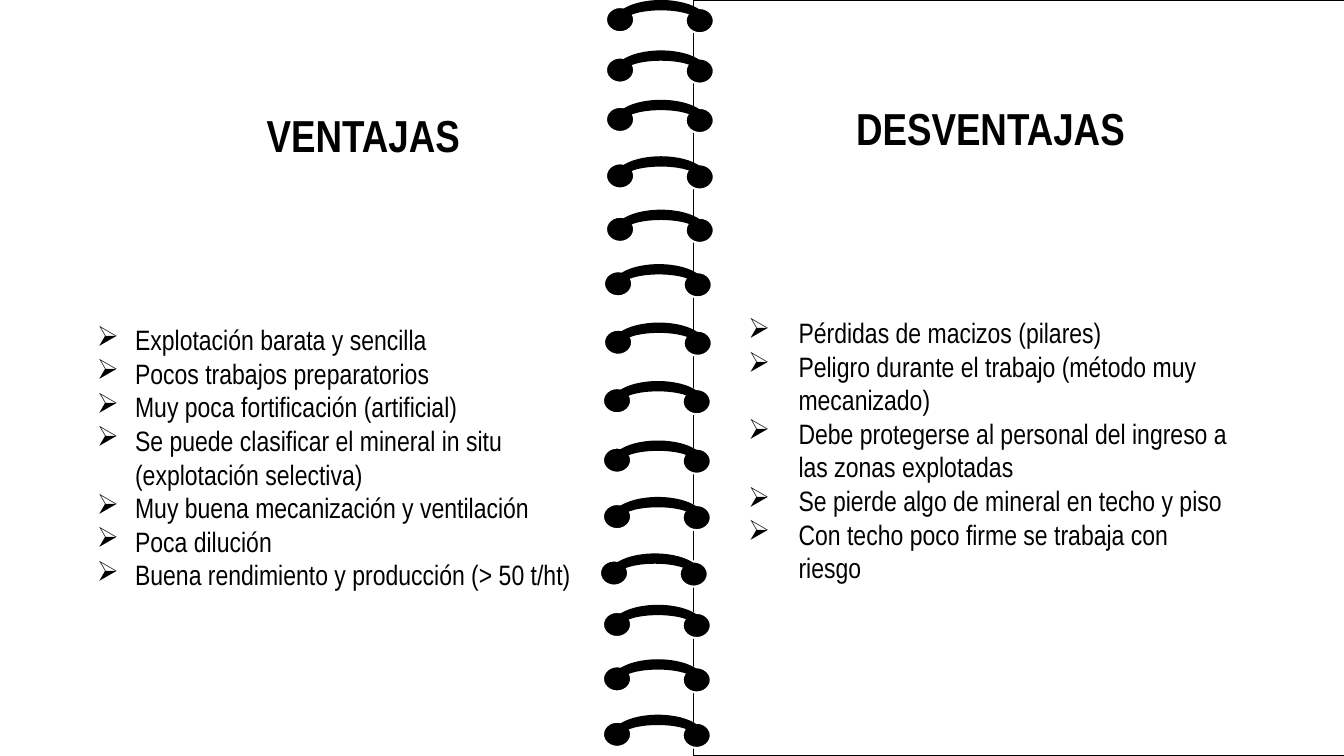
from dataclasses import dataclass

from lxml import etree
from pptx import Presentation
from pptx import util as u
from pptx.dml.color import RGBColor
from pptx.enum import shapes, text
from pptx.oxml.ns import qn

PX = 9144  # 100 px to the inch


@dataclass(frozen=True)
class Theme:
    ink: RGBColor = RGBColor(0, 0, 0)
    paper: RGBColor = RGBColor(255, 255, 255)
    font: str = "Arial Narrow"
    title: int = 32
    body: int = 20


THEME = Theme()

# Left and top of each ring's arc
RINGS = [(610, 0), (610, 50), (610, 99), (610, 155), (610, 208), (608, 262), (608, 320),
         (607, 378), (607, 437), (607, 493), (604, 549), (607, 600), (607, 654), (607, 709)]

VENTAJAS = [
    "Explotación barata y sencilla",
    "Pocos trabajos preparatorios",
    "Muy poca fortificación (artificial)",
    "Se puede clasificar el mineral in situ (explotación selectiva)",
    "Muy buena mecanización y ventilación",
    "Poca dilución",
    "Buena rendimiento y producción (> 50 t/ht)",
]
DESVENTAJAS = [
    "Pérdidas de macizos (pilares)",
    "Peligro durante el trabajo (método muy mecanizado)",
    "Debe protegerse al personal del ingreso a las zonas explotadas",
    "Se pierde algo de mineral en techo y piso",
    "Con techo poco firme se trabaja con riesgo",
]


def px(*lengths):
    return [u.Emu(n * PX) for n in lengths]


def add_shape(s, kind, box, fill, line=None, weight=1):
    sp = s.shapes.add_shape(kind, *px(*box))
    sp.shadow.inherit = False
    sp.fill.solid()
    sp.fill.fore_color.rgb = fill
    if line is None:
        sp.line.fill.background()
    else:
        sp.line.color.rgb = line
        sp.line.width = u.Pt(weight)


def add_ring(s, x, y):
    """Two punched holes joined by an arc whose box starts at x, y."""
    for dx, dy in ((-9, 7), (70, 8)):
        add_shape(s, shapes.MSO_SHAPE.OVAL, (x + dx, y + dy, 28, 25),
                  THEME.ink, THEME.paper, 1.5)
    add_shape(s, shapes.MSO_SHAPE.BLOCK_ARC, (x, y, 91, 41), THEME.ink)


def add_text(s, box, lines, size, bold=False, align=text.PP_ALIGN.LEFT, indent=0):
    """Text without margins; an indent gives every line an arrow bullet."""
    tf = s.shapes.add_textbox(*px(*box)).text_frame
    tf.word_wrap = True
    for side in ("left", "top", "right", "bottom"):
        setattr(tf, f"margin_{side}", 0)
    for i, line in enumerate(lines):
        p = tf.paragraphs[0] if i == 0 else tf.add_paragraph()
        p.alignment = align
        r = p.add_run()
        r.text = line
        for name, value in {"name": THEME.font, "size": u.Pt(size), "bold": bold}.items():
            setattr(r.font, name, value)
        r.font.color.rgb = THEME.ink
        if indent:
            pPr = p._p.get_or_add_pPr()
            pPr.set("marL", str(indent * PX))
            pPr.set("indent", str(-indent * PX))
            etree.SubElement(pPr, qn("a:buChar")).set("char", "➢")


def add_column(s, box, title, items, indent):
    x, y, w, h = box
    list_top = 213
    add_text(s, (x, y, w, 53), [title], THEME.title, True, text.PP_ALIGN.CENTER)
    add_text(s, (x, y + list_top, w, h - list_top), items, THEME.body, indent=indent)


def main():
    prs = Presentation()
    prs.slide_width, prs.slide_height = u.Inches(13.33), u.Inches(7.5)
    s = prs.slides.add_slide(prs.slide_layouts[6])
    s.background.fill.solid()
    s.background.fill.fore_color.rgb = THEME.paper

    add_shape(s, shapes.MSO_SHAPE.RECTANGLE, (688, 0, 675, 750), THEME.paper, THEME.ink)
    for x, y in RINGS:
        add_ring(s, x, y)
    add_column(s, (96, 107, 529, 485), "VENTAJAS", VENTAJAS, 38)
    add_column(s, (742, 100, 481, 485), "DESVENTAJAS", DESVENTAJAS, 50)
    prs.save("out.pptx")


if __name__ == "__main__":
    main()
